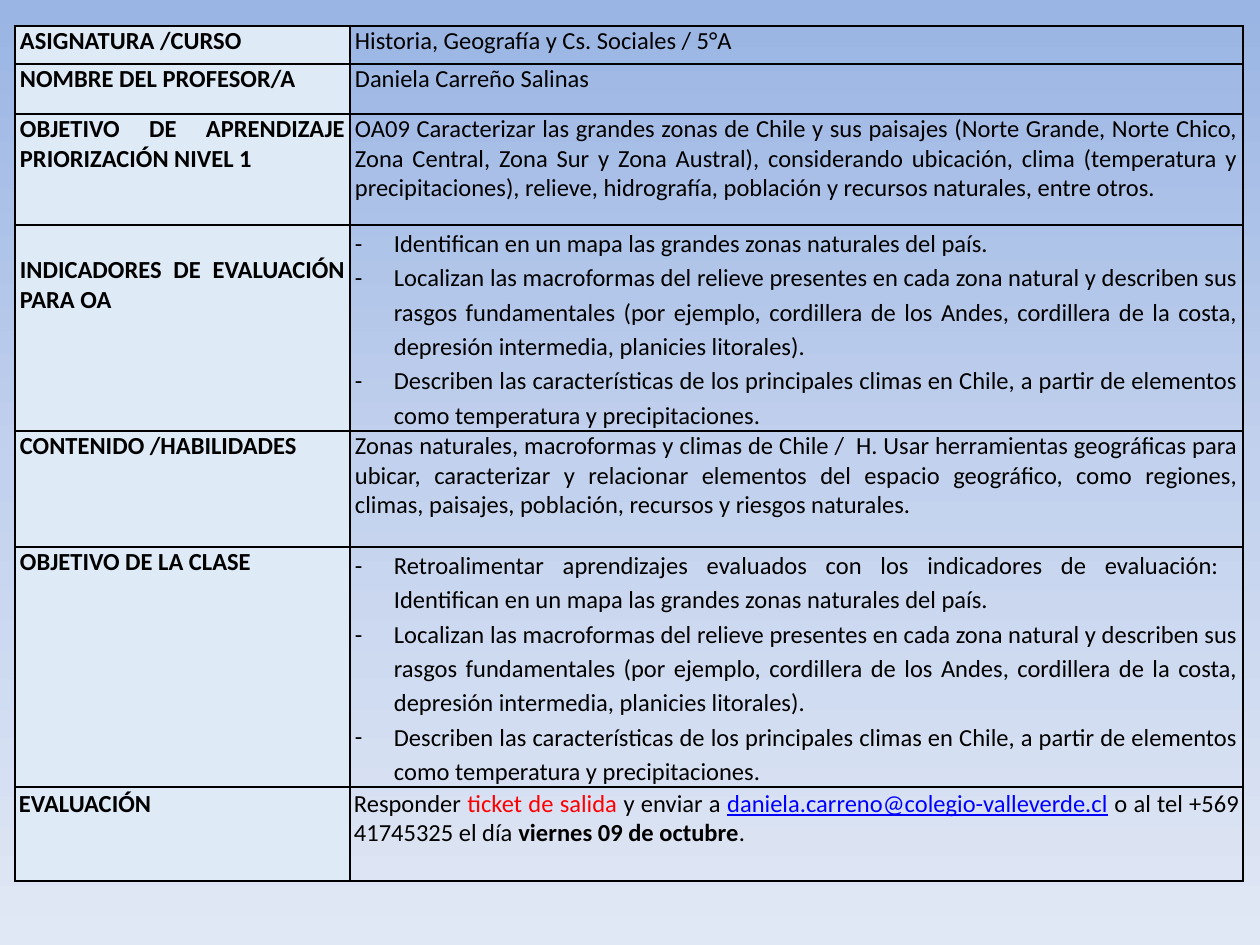
from lxml import etree
from pptx import Presentation
from pptx.dml.color import RGBColor
from pptx.enum.text import PP_ALIGN
from pptx.oxml.ns import qn
from pptx.util import Emu, Pt

JUSTIFY = PP_ALIGN.JUSTIFY
PX = 914400 // 126
FONT, SIZE = "Calibri", 14
BLACK, RED, LINK, LABEL_FILL = "000000", "FF0000", "0000FF", "DEEAF6"
GRADIENT = [(0, "9AB5E4"), (50, "C2D1ED"), (100, "E1E8F5")]
TABLE_BOX = (15, 26, 1228, 855)
COLUMN_WIDTHS = [335, 893]
ROW_HEIGHTS = [38, 50, 111, 206, 116, 240, 94]
SIDE_MARGIN, BULLET_INDENT, TEXT_LINE = 5, 39, 30

IDENTIFY = "Identifican en un mapa las grandes zonas naturales del país."
SHARED_INDICATORS = [
    "Localizan las macroformas del relieve presentes en cada zona natural y describen "
    "sus rasgos fundamentales (por ejemplo, cordillera de los Andes, cordillera de la "
    "costa, depresión intermedia, planicies litorales).",
    "Describen las características de los principales climas en Chile, a partir de "
    "elementos como temperatura y precipitaciones.",
]
# Each row: label, then a text, a list of bullets, or a tuple of (text, format) runs
ROWS = [
    ("ASIGNATURA /CURSO", "Historia, Geografía y Cs. Sociales / 5°A"),
    ("NOMBRE DEL PROFESOR/A", "Daniela Carreño Salinas"),
    ("OBJETIVO DE APRENDIZAJE PRIORIZACIÓN NIVEL 1",
     "OA09 Caracterizar las grandes zonas de Chile y sus paisajes (Norte Grande, Norte "
     "Chico, Zona Central, Zona Sur y Zona Austral), considerando ubicación, clima "
     "(temperatura y precipitaciones), relieve, hidrografía, población y recursos "
     "naturales, entre otros."),
    ("INDICADORES DE EVALUACIÓN PARA OA", [IDENTIFY] + SHARED_INDICATORS),
    ("CONTENIDO /HABILIDADES",
     "Zonas naturales, macroformas y climas de Chile /  H. Usar herramientas geográficas "
     "para ubicar, caracterizar y relacionar elementos del espacio geográfico, como "
     "regiones, climas, paisajes, población, recursos y riesgos naturales."),
    ("OBJETIVO DE LA CLASE",
     ["Retroalimentar aprendizajes evaluados con los indicadores de evaluación:  "
      + IDENTIFY] + SHARED_INDICATORS),
    ("EVALUACIÓN", (
        ("Responder ", {}),
        ("ticket de salida ", {"color": RED}),
        ("y enviar a ", {}),
        ("daniela.carreno@colegio-valleverde.cl", {"color": LINK, "underline": True}),
        (" o al tel +569 41745325 el día ", {}),
        ("viernes 09 de octubre", {"bold": True}),
        (".", {}),
    )),
]
INDICATORS_ROW, EVALUATION_ROW = 3, 6


def px(length):
    return Emu(length * PX)


def rgb(value):
    return RGBColor.from_string(value)


def add_element(parent, tag, **attributes):
    element = etree.SubElement(parent, qn(tag))
    for name, value in attributes.items():
        element.set(name, str(value))
    return element


def paint_background(slide):
    fill = slide.background.fill
    fill.gradient()
    fill.gradient_angle = 270
    stops = next(slide.element.iter(qn("a:gsLst")))
    for stop in list(stops):
        stops.remove(stop)
    for position, color in GRADIENT:
        stop = add_element(stops, "a:gs", pos=position * 1000)
        add_element(stop, "a:srgbClr", val=color)


def add_run(paragraph, text, color=BLACK, bold=False, underline=False):
    run = paragraph.add_run()
    run.text = text
    font = run.font
    font.name, font.size, font.bold = FONT, Pt(SIZE), bold
    font.color.rgb = rgb(color)
    if underline:
        font.underline = True


def set_bullet(paragraph):
    paragraph.line_spacing = 1.15
    properties = paragraph._p.get_or_add_pPr()
    properties.set("marL", str(px(BULLET_INDENT)))
    properties.set("indent", str(-px(BULLET_INDENT)))
    add_element(properties, "a:buFont", typeface=FONT)
    add_element(properties, "a:buChar", char="-")


def fill_cell(cell, content, bold=False):
    """Write a text, a list of bullets or a tuple of formatted runs."""
    bulleted = isinstance(content, list)
    frame = cell.text_frame
    for index, item in enumerate(content if bulleted else [content]):
        paragraph = frame.add_paragraph() if index else frame.paragraphs[0]
        paragraph.alignment = JUSTIFY
        if bulleted:
            set_bullet(paragraph)
        runs = item if isinstance(item, tuple) else ((item, {"bold": bold}),)
        for text, style in runs:
            add_run(paragraph, text, **style)


def style_cell(cell, fill_color, side_margin, top_margin):
    cell.margin_left = cell.margin_right = px(side_margin)
    cell.margin_top, cell.margin_bottom = px(top_margin), 0
    if fill_color:
        cell.fill.solid()
        cell.fill.fore_color.rgb = rgb(fill_color)
    else:
        cell.fill.background()
    properties = cell._tc.get_or_add_tcPr()
    for index, side in enumerate(("a:lnL", "a:lnR", "a:lnT", "a:lnB")):
        border = add_element(properties, side, w=Pt(1))
        add_element(add_element(border, "a:solidFill"), "a:srgbClr", val=BLACK)
        properties.insert(index, border)


def add_lesson_table(slide, box):
    frame = slide.shapes.add_table(len(ROWS), len(COLUMN_WIDTHS), *map(px, box))
    table = frame.table
    table.first_row = table.horz_banding = False
    for column, width in zip(table.columns, COLUMN_WIDTHS):
        column.width = px(width)
    for index, (label, content) in enumerate(ROWS):
        table.rows[index].height = px(ROW_HEIGHTS[index])
        last = index == EVALUATION_ROW
        side, top = (SIDE_MARGIN - 1, 2) if last else (SIDE_MARGIN, 0)
        label_top = TEXT_LINE if index == INDICATORS_ROW else top
        label_cell, content_cell = table.cell(index, 0), table.cell(index, 1)
        fill_cell(label_cell, label, bold=True)
        fill_cell(content_cell, content)
        style_cell(label_cell, LABEL_FILL, side, label_top)
        style_cell(content_cell, None, side, top)


def main():
    presentation = Presentation()
    presentation.slide_width, presentation.slide_height = px(1260), px(945)
    slide = presentation.slides.add_slide(presentation.slide_layouts[6])
    paint_background(slide)
    add_lesson_table(slide, TABLE_BOX)
    presentation.save("out.pptx")


if __name__ == "__main__":
    main()
